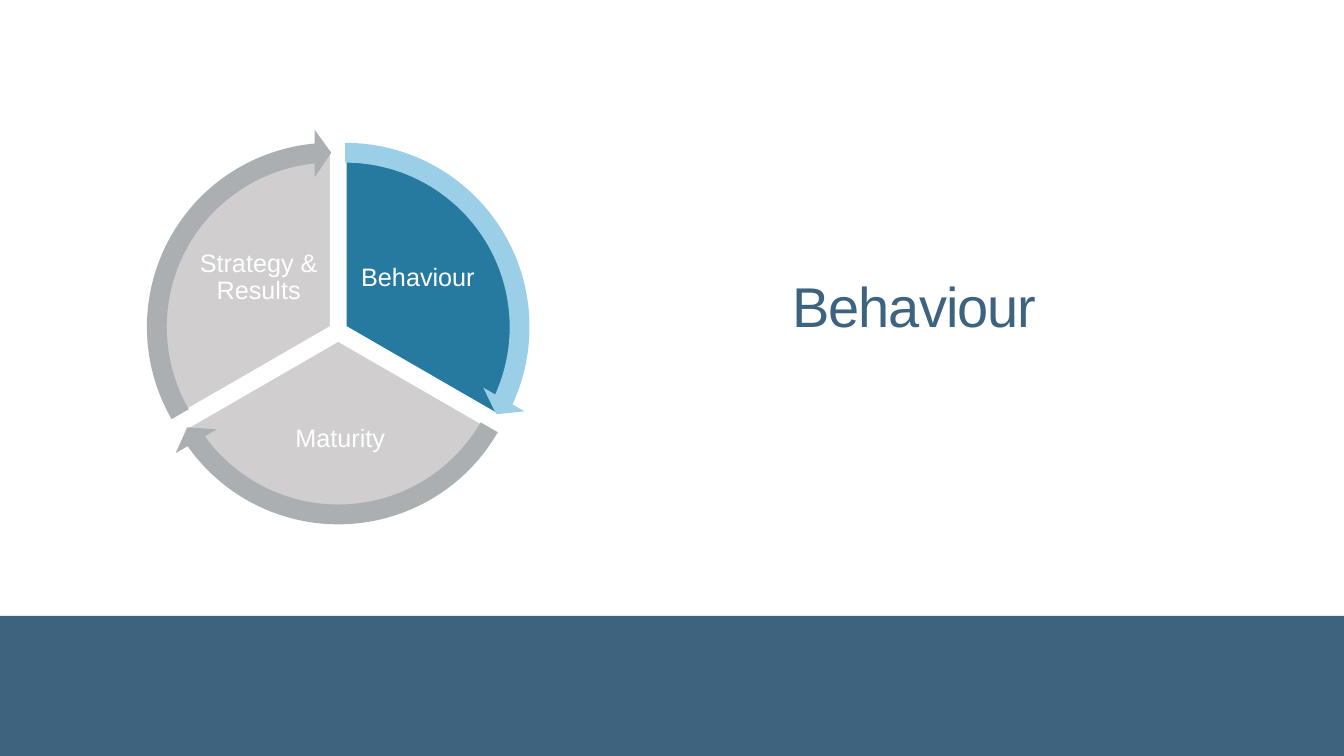
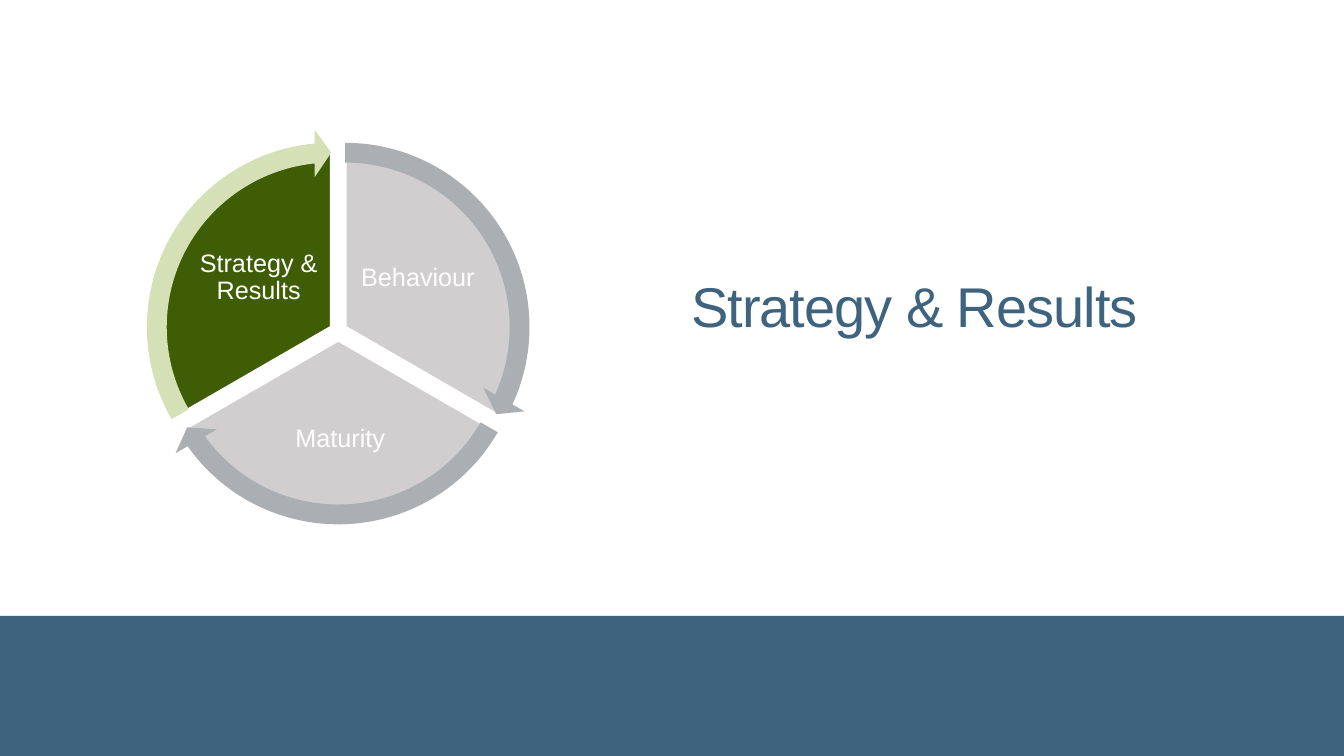
from pptx import Presentation
from pptx.dml.color import RGBColor
from pptx.enum.shapes import MSO_SHAPE as Shape
from pptx.enum.text import MSO_ANCHOR as Anchor, PP_ALIGN as Align
from pptx.util import Pt

PX = 9144
SLIDE_W, SLIDE_H = 1333, 750
BAND_TOP = 611
TITLE_BOX = (554, 269, 706, 125)
PIE_SIZE, RING_SIZE = 349, 393
RING_MARGIN = (RING_SIZE - PIE_SIZE) // 2
FONT = "Arial"

COLOURS = {
    "navy": "3E637E", "white": "FFFFFF",
    "blue": "267A9F", "light blue": "9ACFE7",
    "green": "3F5D04", "light green": "D6E0B6",
    "grey": "D0CECE", "dark grey": "ABAFB2",
}
MUTED = ("grey", "dark grey")

SECTORS = [
    {"label": "Behaviour", "corner": (168, 150), "angles": (162, 18),
     "arrow": (14.73, 161.99), "label_box": (352, 224, 125, 104)},
    {"label": "Maturity", "corner": (161, 163), "angles": (18, 90),
     "arrow": (86.72, 18.01), "label_box": (244, 390, 187, 92)},
    {"label": "Strategy & Results", "corner": (154, 150), "angles": (90, 162),
     "arrow": (158.73, 90), "label_box": (194, 224, 125, 104)},
]
SLIDES = [
    ("Behaviour", ("blue", "light blue")),
    ("Strategy & Results", ("green", "light green")),
]


def rgb(name):
    return RGBColor.from_string(COLOURS[name])


def emu(box):
    return [length * PX for length in box]


def add_filled(shapes, kind, box, colour, adjustments=()):
    shape = shapes.add_shape(kind, *emu(box))
    shape.shadow.inherit = False
    shape.fill.solid()
    shape.fill.fore_color.rgb = rgb(colour)
    shape.line.fill.background()
    for index, value in enumerate(adjustments):
        shape.adjustments[index] = value
    return shape


def add_text(shapes, box, text, size, colour, inset=0, anchor=Anchor.TOP):
    frame = shapes.add_textbox(*emu(box)).text_frame
    frame.word_wrap = True
    frame.vertical_anchor = anchor
    frame.margin_left = frame.margin_right = inset * PX
    frame.margin_top = frame.margin_bottom = inset * PX
    paragraph = frame.paragraphs[0]
    paragraph.text = text
    paragraph.alignment = Align.CENTER
    paragraph.font.name = FONT
    paragraph.font.size = Pt(size)
    paragraph.font.color.rgb = rgb(colour)
    return paragraph


def add_cycle(shapes, active, highlight):
    cycle = shapes.add_group_shape().shapes
    palettes = [highlight if sector["label"] == active else MUTED for sector in SECTORS]
    for sector, (fill, _) in zip(SECTORS, palettes):
        box = (*sector["corner"], PIE_SIZE, PIE_SIZE)
        pie = add_filled(cycle, Shape.PIE, box, fill, sector["angles"])
        pie.line.color.rgb = rgb("white")
        pie.line.width = Pt(2)
        label = add_text(cycle, sector["label_box"], sector["label"], 18, "white", 3, Anchor.MIDDLE)
        label.line_spacing = 0.9
    for sector, (_, ring) in zip(SECTORS, palettes):
        left, top = (edge - RING_MARGIN for edge in sector["corner"])
        start, end = sector["arrow"]
        add_filled(cycle, Shape.CIRCULAR_ARROW, (left, top, RING_SIZE, RING_SIZE), ring,
                   (0.05, 3.28, start, end, 0.06))


def add_section(deck, title, highlight):
    shapes = deck.slides.add_slide(deck.slide_layouts[6]).shapes
    heading = add_text(shapes, TITLE_BOX, title, 40, "navy")
    heading.runs[0].font._element.set("spc", "-70")
    add_filled(shapes, Shape.RECTANGLE, (0, BAND_TOP, SLIDE_W, SLIDE_H - BAND_TOP), "navy")
    add_cycle(shapes, title, highlight)


def main():
    """Build the section slides around the shared three-part cycle."""
    deck = Presentation()
    deck.slide_width, deck.slide_height = emu((SLIDE_W, SLIDE_H))
    for title, highlight in SLIDES:
        add_section(deck, title, highlight)
    deck.save("out.pptx")


if __name__ == "__main__":
    main()
